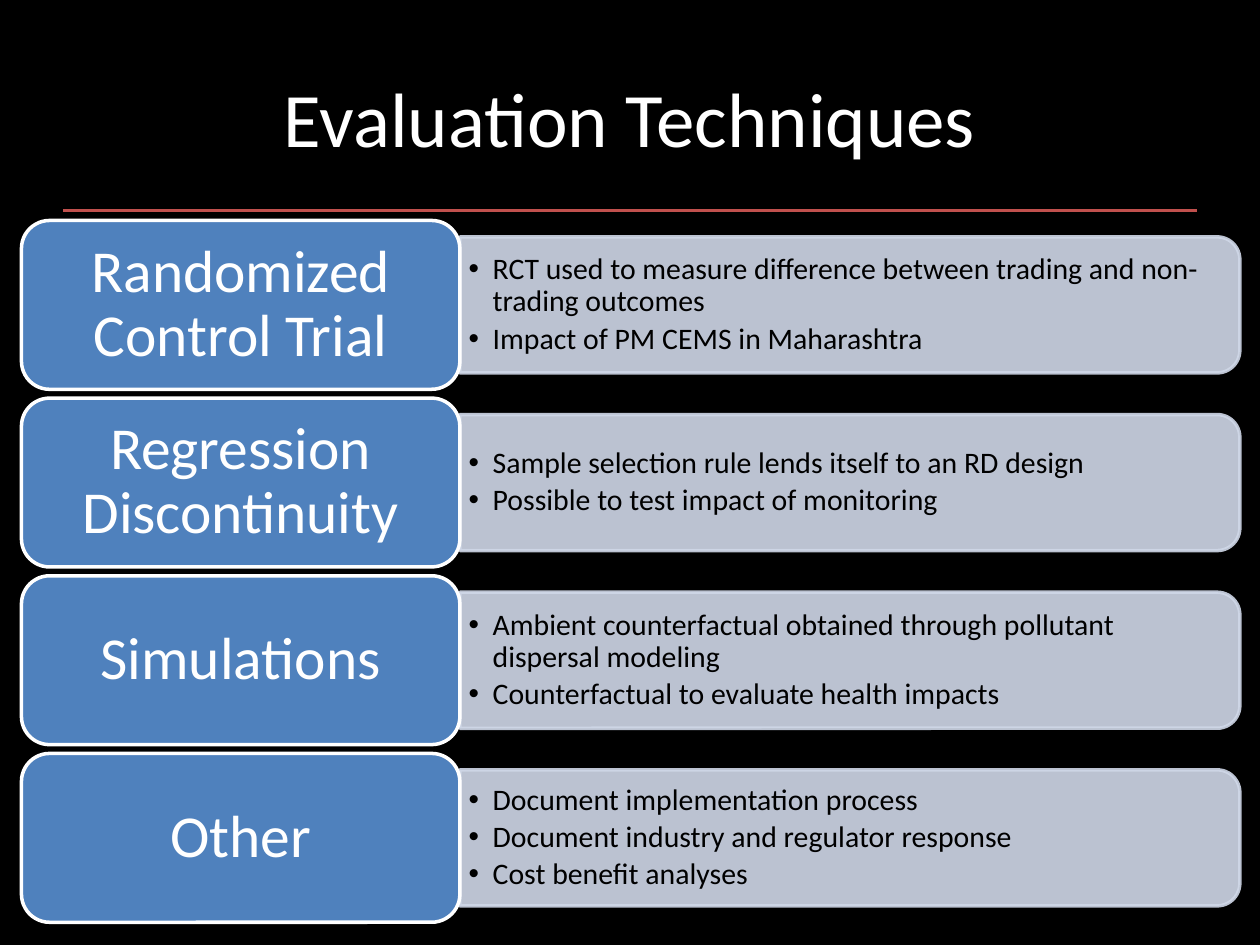
from lxml.etree import SubElement
from pptx import Presentation
from pptx.dml.color import RGBColor
from pptx.enum.shapes import MSO_CONNECTOR, MSO_SHAPE
from pptx.enum.text import MSO_ANCHOR, PP_ALIGN
from pptx.oxml.ns import qn
from pptx.util import Inches, Pt

BLACK = RGBColor(0x00, 0x00, 0x00)
WHITE = RGBColor(0xFF, 0xFF, 0xFF)
RED = RGBColor(0xC0, 0x50, 0x4D)
BLUE = RGBColor(0x4F, 0x81, 0xBD)
PALE_BLUE = RGBColor(0xD0, 0xD8, 0xE8)

TECHNIQUES = [
    ("Randomized Control Trial", [
        "RCT used to measure difference between trading and non-trading outcomes",
        "Impact of PM CEMS in Maharashtra",
    ]),
    ("Regression Discontinuity", [
        "Sample selection rule lends itself to an RD design",
        "Possible to test impact of monitoring",
    ]),
    ("Simulations", [
        "Ambient counterfactual obtained through pollutant dispersal modeling",
        "Counterfactual to evaluate health impacts",
    ]),
    ("Other", [
        "Document implementation process",
        "Document industry and regulator response",
        "Cost benefit analyses",
    ]),
]

# Row geometry in inches
FIRST_TOP, ROW_PITCH = 1.75, 1.41
LABEL_LEFT, LABEL_WIDTH, LABEL_HEIGHT = 0.17, 3.48, 1.34
PANEL_LEFT, PANEL_WIDTH, PANEL_HEIGHT = 3.65, 6.19, 1.08
BULLETS_WIDTH, BULLETS_HEIGHT = 6.13, 0.97
BULLET_INDENT = Inches(0.19)


class SlideBuilder:
    """Holds the style and the slide being filled."""

    font = "Calibri"
    line_width = Pt(2)

    def __init__(self, slide):
        self.slide = slide
        slide.background.fill.solid()
        slide.background.fill.fore_color.rgb = BLACK

    def frame(self, shape, inset_x, inset_y):
        frame = shape.text_frame
        frame.word_wrap = True
        frame.vertical_anchor = MSO_ANCHOR.MIDDLE
        frame.margin_left = frame.margin_right = Inches(inset_x)
        frame.margin_top = frame.margin_bottom = Inches(inset_y)
        return frame

    def add_text(self, paragraph, text, size, color, align=PP_ALIGN.CENTER):
        paragraph.alignment = align
        run = paragraph.add_run()
        run.text = text
        run.font.name = self.font
        run.font.size = Pt(size)
        run.font.color.rgb = color

    def shape(self, kind, left, top, width, height, fill, line):
        shape = self.slide.shapes.add_shape(
            kind, Inches(left), Inches(top), Inches(width), Inches(height))
        shape.shadow.inherit = False
        shape.fill.solid()
        shape.fill.fore_color.rgb = fill
        shape.line.color.rgb = line
        shape.line.width = self.line_width
        return shape

    def text_box(self, left, top, width, height):
        return self.slide.shapes.add_textbox(
            Inches(left), Inches(top), Inches(width), Inches(height))

    def title(self, text):
        frame = self.frame(self.text_box(0.5, 0.3, 9, 1.25), 0.1, 0.05)
        self.add_text(frame.paragraphs[0], text, 44, WHITE)

    def rule(self, left, right, y):
        rule = self.slide.shapes.add_connector(
            MSO_CONNECTOR.STRAIGHT, Inches(left), Inches(y), Inches(right), Inches(y))
        rule.line.color.rgb = RED
        rule.line.width = self.line_width
        SubElement(rule._element.spPr, qn("a:effectLst"))

    def panel(self, middle):
        # Turned a quarter, so that the rounded top faces right
        center_x = PANEL_LEFT + PANEL_WIDTH / 2
        panel = self.shape(
            MSO_SHAPE.ROUND_2_SAME_RECTANGLE,
            center_x - PANEL_HEIGHT / 2, middle - PANEL_WIDTH / 2,
            PANEL_HEIGHT, PANEL_WIDTH, PALE_BLUE, PALE_BLUE)
        panel.rotation = 90
        for color in panel._element.spPr.iter(qn("a:srgbClr")):
            SubElement(color, qn("a:alpha"), val="90000")

    def bullets(self, middle, items):
        box = self.text_box(
            PANEL_LEFT, middle - BULLETS_HEIGHT / 2, BULLETS_WIDTH, BULLETS_HEIGHT)
        frame = self.frame(box, 0.07, 0.04)
        for index, item in enumerate(items):
            paragraph = frame.add_paragraph() if index else frame.paragraphs[0]
            paragraph.line_spacing = 0.9
            paragraph.space_after = Pt(3)
            self.add_text(paragraph, item, 17, BLACK, PP_ALIGN.LEFT)
            properties = paragraph._p.get_or_add_pPr()
            properties.set("marL", str(BULLET_INDENT))
            properties.set("indent", str(-BULLET_INDENT))
            SubElement(properties, qn("a:buFont"), typeface="Arial")
            SubElement(properties, qn("a:buChar"), char="•")

    def label(self, middle, text):
        label = self.shape(
            MSO_SHAPE.ROUNDED_RECTANGLE, LABEL_LEFT, middle - LABEL_HEIGHT / 2,
            LABEL_WIDTH, LABEL_HEIGHT, BLUE, WHITE)
        paragraph = self.frame(label, 0.14, 0.07).paragraphs[0]
        paragraph.line_spacing = 0.9
        self.add_text(paragraph, text, 34, WHITE)


def main():
    presentation = Presentation()
    presentation.slide_width = Inches(10)
    presentation.slide_height = Inches(7.5)
    builder = SlideBuilder(
        presentation.slides.add_slide(presentation.slide_layouts[6]))

    # Heading
    builder.rule(0.5, 9.5, 1.67)
    builder.title("Evaluation Techniques")

    # One row per technique
    for row, (name, points) in enumerate(TECHNIQUES):
        middle = FIRST_TOP + row * ROW_PITCH + LABEL_HEIGHT / 2
        builder.panel(middle)
        builder.bullets(middle, points)
        builder.label(middle, name)

    presentation.save("out.pptx")


if __name__ == "__main__":
    main()
